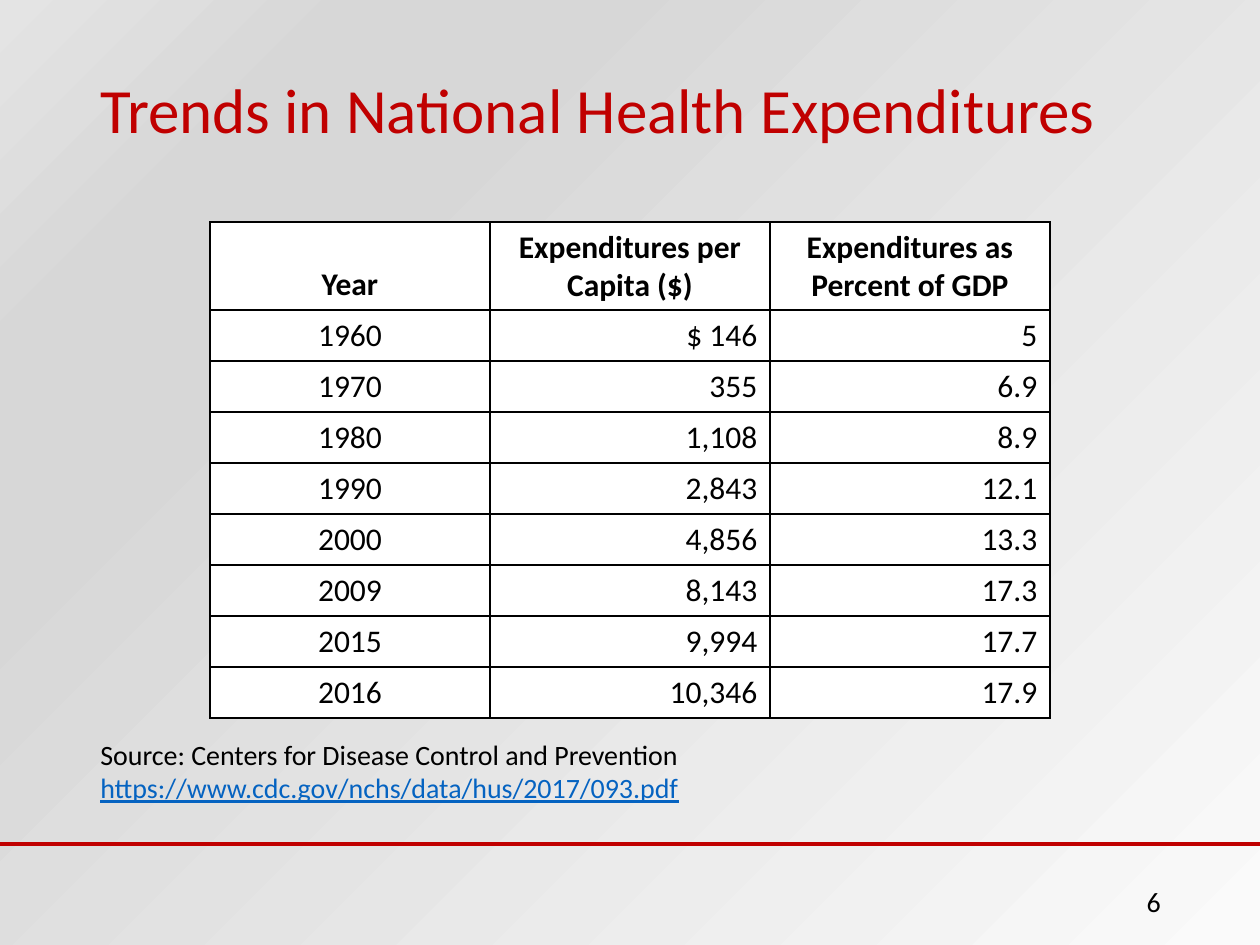
from lxml.etree import SubElement
from pptx import Presentation
from pptx.dml.color import RGBColor
from pptx.enum.shapes import MSO_CONNECTOR
from pptx.enum.text import MSO_ANCHOR as Anchor, PP_ALIGN as Align
from pptx.oxml import parse_xml
from pptx.oxml.ns import nsdecls, qn
from pptx.util import Pt

PX = 914400 / 126
FONT = "Calibri"
COLORS = {"accent": "C00000", "text": "000000", "link": "0563C1", "cell": "FFFFFF"}
BACKDROP_STOPS = [(0, "FAFAFA"), (74, "D7D7D7"), (83, "D7D7D7"), (100, "E4E4E4")]

HEADINGS = ("Year", "Expenditures per Capita ($)", "Expenditures as Percent of GDP")
EXPENDITURES = [
    ("1960", "$ 146", "5"),
    ("1970", "355", "6.9"),
    ("1980", "1,108", "8.9"),
    ("1990", "2,843", "12.1"),
    ("2000", "4,856", "13.3"),
    ("2009", "8,143", "17.3"),
    ("2015", "9,994", "17.7"),
    ("2016", "10,346", "17.9"),
]


def px(*lengths):
    return [round(length * PX) for length in lengths]


def rgb(name):
    return RGBColor.from_string(COLORS[name])


class SlideBuilder:
    def __init__(self, slide):
        self.slide = slide

    def backdrop(self, stops):
        """Fill the background with a radial gradient centred bottom right."""
        fill = self.slide.background.fill
        fill.gradient()
        stop_xml = "".join(
            f'<a:gs pos="{pos * 1000}"><a:srgbClr val="{color}"/></a:gs>'
            for pos, color in stops)
        gradient = parse_xml(
            f'<a:gradFill {nsdecls("a")} rotWithShape="1"><a:gsLst>{stop_xml}</a:gsLst>'
            '<a:path path="circle"><a:fillToRect l="100000" t="100000"/></a:path>'
            '</a:gradFill>')
        default = self.slide.background._cSld.find(".//" + qn("a:gradFill"))
        default.getparent().replace(default, gradient)

    def style(self, paragraph, size, color="text", align=Align.LEFT, bold=False):
        paragraph.alignment = align
        for run in paragraph.runs:
            run.font.name = FONT
            run.font.size = Pt(size)
            run.font.bold = bold
            run.font.color.rgb = rgb(color)

    def text(self, box, content, size, color="text", align=Align.LEFT, anchor=Anchor.TOP):
        frame = self.slide.shapes.add_textbox(*px(*box)).text_frame
        frame.word_wrap = True
        frame.vertical_anchor = anchor
        frame.text = content
        for paragraph in frame.paragraphs:
            self.style(paragraph, size, color, align)
        return frame

    def rule(self, start, end, color, width):
        line = self.slide.shapes.add_connector(MSO_CONNECTOR.STRAIGHT, *px(*start, *end))
        line.line.color.rgb = rgb(color)
        line.line.width = Pt(width)
        SubElement(line._element.spPr, qn("a:effectLst"))

    def border(self, cell, width):
        properties = cell._tc.get_or_add_tcPr()
        for position, side in enumerate(("lnL", "lnR", "lnT", "lnB")):
            properties.insert(position, parse_xml(
                f'<a:{side} {nsdecls("a")} w="{Pt(width)}"><a:solidFill>'
                f'<a:srgbClr val="{COLORS["text"]}"/></a:solidFill></a:{side}>'))

    def table(self, box, rows, header_height, row_height, size):
        """Draw a bordered table: bold header, centred first column, figures right."""
        table = self.slide.shapes.add_table(len(rows), len(rows[0]), *px(*box)).table
        table.horz_banding = False
        for r, row in enumerate(rows):
            header = r == 0
            table.rows[r].height = px(header_height if header else row_height)[0]
            for c, value in enumerate(row):
                cell = table.cell(r, c)
                cell.text = value
                cell.fill.solid()
                cell.fill.fore_color.rgb = rgb("cell")
                cell.vertical_anchor = Anchor.BOTTOM if header else Anchor.TOP
                align = Align.CENTER if header or c == 0 else Align.RIGHT
                self.style(cell.text_frame.paragraphs[0], size, align=align, bold=header)
                self.border(cell, 1)


def main():
    deck = Presentation()
    deck.slide_width, deck.slide_height = px(1260, 945)
    builder = SlideBuilder(deck.slides.add_slide(deck.slide_layouts[6]))

    builder.backdrop(BACKDROP_STOPS)
    title = builder.text((88, 38, 1084, 151), "Trends in National Health Expenditures",
                         36, "accent", anchor=Anchor.MIDDLE)
    title.paragraphs[0].line_spacing = 0.9
    builder.rule((0, 844), (1260, 844), "accent", 2)
    source = builder.text(
        (88, 731, 1084, 76),
        "Source: Centers for Disease Control and Prevention\n"
        "https://www.cdc.gov/nchs/data/hus/2017/093.pdf", 16)
    address = source.paragraphs[1].runs[0].font
    address.color.rgb = rgb("link")
    address.underline = True
    builder.text((890, 876, 283, 50), "6", 16, align=Align.RIGHT, anchor=Anchor.MIDDLE)
    builder.table((210, 222, 840, 496), [HEADINGS, *EXPENDITURES], 88, 51, 18)

    deck.save("out.pptx")


if __name__ == "__main__":
    main()
